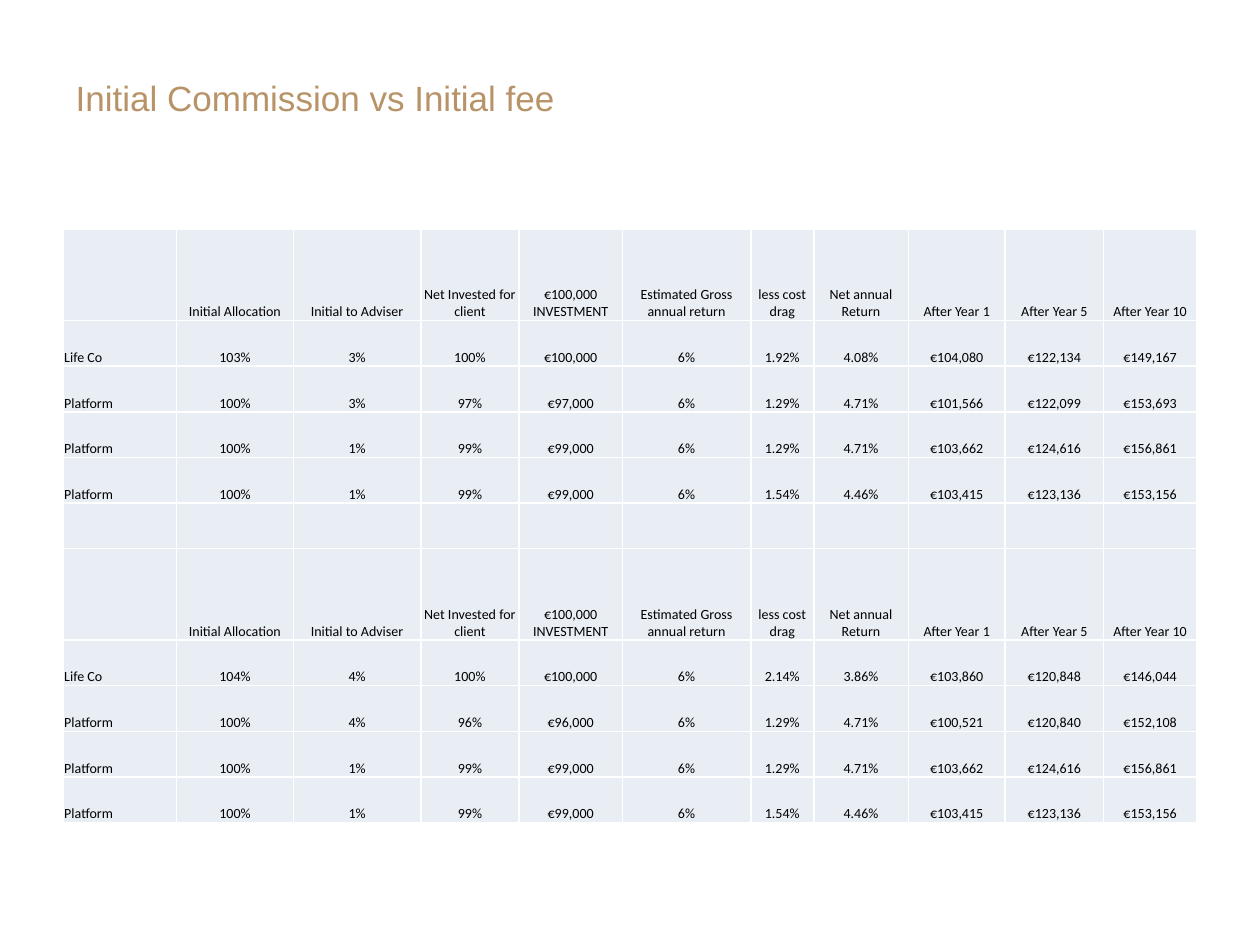
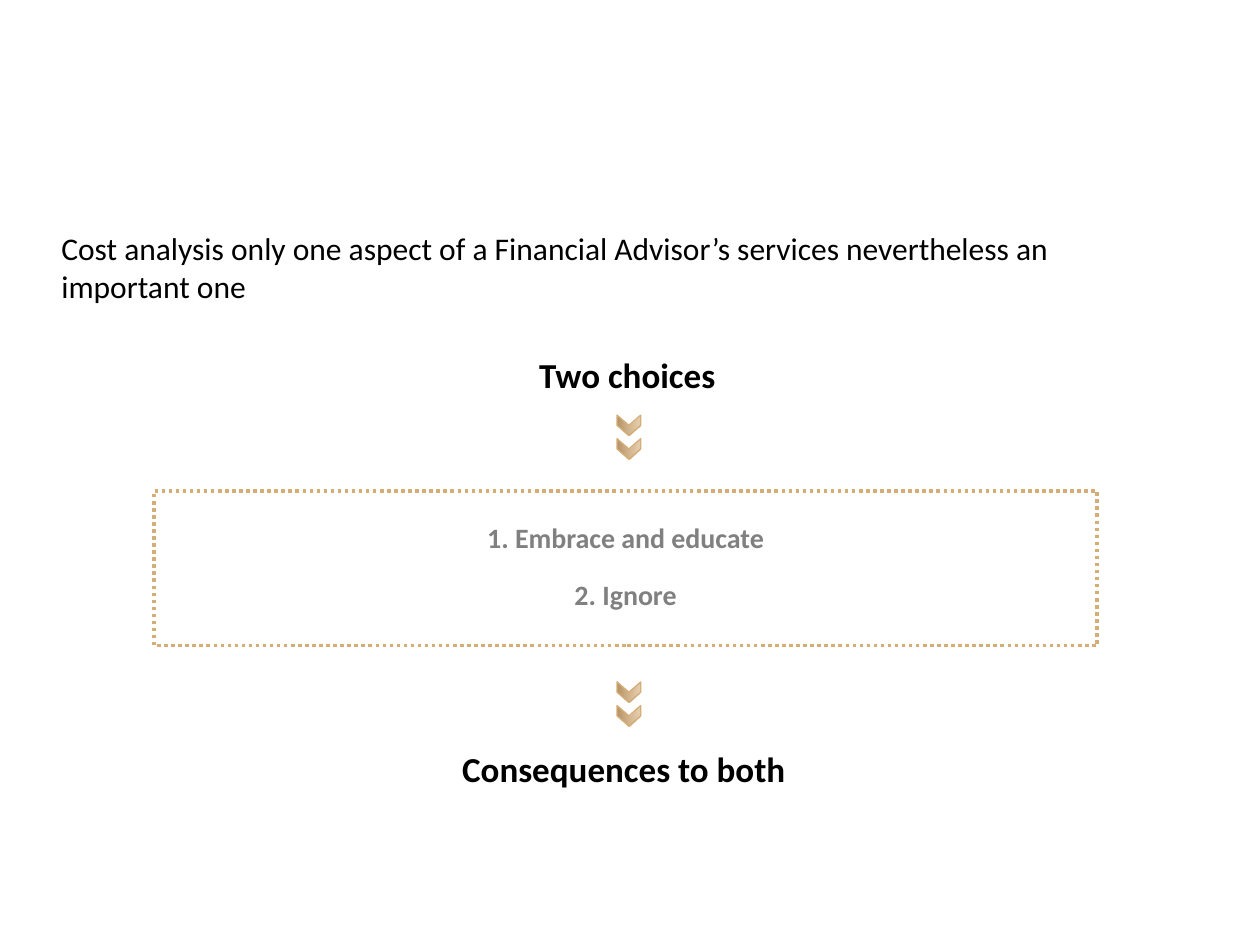
from dataclasses import dataclass

from lxml import etree
from pptx import Presentation
from pptx.dml.color import RGBColor
from pptx.enum.dml import MSO_LINE
from pptx.enum.shapes import MSO_SHAPE
from pptx.enum.text import MSO_ANCHOR, PP_ALIGN
from pptx.oxml.ns import qn
from pptx.slide import Slide
from pptx.table import _Cell
from pptx.text.text import TextFrame
from pptx.util import Pt

DARK_GOLD = RGBColor(0xB8, 0x93, 0x67)
LIGHT_GOLD = RGBColor(0xD4, 0xAD, 0x77)
BLACK = RGBColor(0x00, 0x00, 0x00)
WHITE = RGBColor(0xFF, 0xFF, 0xFF)
GREY = RGBColor(0x80, 0x80, 0x80)
CELL_BLUE = RGBColor(0xE9, 0xED, 0xF4)

LEFT, CENTER = PP_ALIGN.LEFT, PP_ALIGN.CENTER
TOP, MIDDLE, BOTTOM = MSO_ANCHOR.TOP, MSO_ANCHOR.MIDDLE, MSO_ANCHOR.BOTTOM
RECTANGLE, CHEVRON = MSO_SHAPE.RECTANGLE, MSO_SHAPE.CHEVRON
DOTTED = MSO_LINE.ROUND_DOT
TITLE_ONLY, BLANK = 5, 6

TITLE_FONT, BODY_FONT = "Arial", "Calibri"
LIGHT_GOLD_OPACITY = 57
LINE_PITCH = 16.2
ROW_HEIGHT = 26.1
CELL_INSET = 0.72
COLUMN_WIDTHS = (64.8, 67, 72.7, 56.2, 59, 73.4, 36, 54, 55.4, 56.2, 53.3)

HEADINGS = ("", "Initial Allocation", "Initial to Adviser", "Net Invested for client",
            "€100,000 INVESTMENT", "Estimated Gross annual return", "less cost drag",
            "Net annual Return", "After Year 1", "After Year 5", "After Year 10")
PLATFORM_LOW_FEE = (
    ("Platform", "100%", "1%", "99%", "€99,000", "6%", "1.29%", "4.71%",
     "€103,662", "€124,616", "€156,861"),
    ("Platform", "100%", "1%", "99%", "€99,000", "6%", "1.54%", "4.46%",
     "€103,415", "€123,136", "€153,156"),
)
COMPARISON = (
    HEADINGS,
    ("Life Co", "103%", "3%", "100%", "€100,000", "6%", "1.92%", "4.08%",
     "€104,080", "€122,134", "€149,167"),
    ("Platform", "100%", "3%", "97%", "€97,000", "6%", "1.29%", "4.71%",
     "€101,566", "€122,099", "€153,693"),
    *PLATFORM_LOW_FEE,
    ("",) * len(HEADINGS),
    HEADINGS,
    ("Life Co", "104%", "4%", "100%", "€100,000", "6%", "2.14%", "3.86%",
     "€103,860", "€120,848", "€146,044"),
    ("Platform", "100%", "4%", "96%", "€96,000", "6%", "1.29%", "4.71%",
     "€100,521", "€120,840", "€152,108"),
    *PLATFORM_LOW_FEE,
)


@dataclass(frozen=True)
class Statement:
    text: str
    left: float
    top: float
    width: float
    height: float
    size: float
    bold: bool = False
    wrap: bool = False


STATEMENTS = (
    Statement("Cost analysis only one aspect of a Financial Advisor’s services "
              "nevertheless an important one", 28, 127.5, 648, 51, 18, wrap=True),
    Statement("Two choices", 301, 198.7, 116, 31.5, 20, bold=True),
    Statement("Consequences to both", 257, 423.5, 201, 31.5, 20, bold=True),
)
CHEVRON_PAIR_TOPS = (236.3, 388.8)
CHEVRON_LEFT, CHEVRON_WIDTH, CHEVRON_PITCH = 353.5, 11.7, 13.5


def write_text(frame: TextFrame, *lines: str, size: float, color: RGBColor = BLACK,
               font: str = BODY_FONT, bold: bool = False, align: PP_ALIGN = LEFT,
               anchor: MSO_ANCHOR = TOP, wrap: bool = True,
               pitch: float | None = None, gap: float = 0) -> None:
    frame.word_wrap = wrap
    frame.vertical_anchor = anchor
    for index, line in enumerate(lines):
        paragraph = frame.paragraphs[0] if index == 0 else frame.add_paragraph()
        paragraph.alignment = align
        if pitch:
            paragraph.line_spacing = Pt(pitch)
        if index:
            paragraph.space_before = Pt(gap)
        run = paragraph.add_run()
        run.text = line
        run.font.name, run.font.size, run.font.bold = font, Pt(size), bold
        run.font.color.rgb = color


def add_borders(cell: _Cell) -> None:
    properties = cell._tc.get_or_add_tcPr()
    for side in ("a:lnL", "a:lnR", "a:lnT", "a:lnB"):
        line = etree.SubElement(properties, qn(side), w=str(Pt(1)))
        fill = etree.SubElement(line, qn("a:solidFill"))
        etree.SubElement(fill, qn("a:srgbClr"), val=str(WHITE))


def add_comparison_table(slide: Slide) -> None:
    frame = slide.shapes.add_table(len(COMPARISON), len(HEADINGS), Pt(36), Pt(131),
                                   Pt(sum(COLUMN_WIDTHS)),
                                   Pt(ROW_HEIGHT * len(COMPARISON)))
    table = frame.table
    table.first_row = table.horz_banding = False
    for column, width in zip(table.columns, COLUMN_WIDTHS):
        column.width = Pt(width)
    for row, values in zip(table.rows, COMPARISON):
        row.height = Pt(ROW_HEIGHT * (2 if values is HEADINGS else 1))
        for index, (cell, value) in enumerate(zip(row.cells, values)):
            add_borders(cell)
            cell.fill.solid()
            cell.fill.fore_color.rgb = CELL_BLUE
            cell.margin_left = cell.margin_right = cell.margin_top = Pt(CELL_INSET)
            cell.margin_bottom = 0
            cell.vertical_anchor = BOTTOM
            if value:
                write_text(cell.text_frame, value, size=8, anchor=BOTTOM,
                           align=CENTER if index else LEFT)


def add_statement(slide: Slide, statement: Statement) -> None:
    box = slide.shapes.add_textbox(Pt(statement.left), Pt(statement.top),
                                   Pt(statement.width), Pt(statement.height))
    write_text(box.text_frame, statement.text, size=statement.size,
               bold=statement.bold, wrap=statement.wrap)


def add_choices_box(slide: Slide) -> None:
    box = slide.shapes.add_shape(RECTANGLE, Pt(88), Pt(280.6), Pt(539), Pt(88.4))
    box.shadow.inherit = False
    box.fill.background()
    box.line.color.rgb = LIGHT_GOLD
    box.line.width = Pt(2)
    box.line.dash_style = DOTTED
    box.text_frame.margin_top = Pt(3.6 + LINE_PITCH)
    write_text(box.text_frame, "1. Embrace and educate", "2. Ignore", size=16,
               color=GREY, bold=True, align=CENTER, pitch=LINE_PITCH, gap=LINE_PITCH)


def add_chevron_pair(slide: Slide, top: float) -> None:
    """Draw two grouped chevrons pointing down, shaded from left to right."""
    pair = slide.shapes.add_group_shape()
    for index in range(2):
        chevron = pair.shapes.add_shape(
            CHEVRON, Pt(CHEVRON_LEFT), Pt(top + index * CHEVRON_PITCH),
            Pt(CHEVRON_WIDTH), Pt(CHEVRON_PITCH))
        chevron.rotation = 90
        chevron.shadow.inherit = False
        chevron.line.color.rgb = LIGHT_GOLD
        chevron.line.width = Pt(0.75)
        chevron.fill.gradient()
        chevron.fill.gradient_angle = 0
        for stop, color in zip(chevron.fill.gradient_stops, (DARK_GOLD, LIGHT_GOLD)):
            stop.color.rgb = color
        gradient = chevron._element.spPr.find(qn("a:gradFill"))
        gradient.set("rotWithShape", "0")
        last_color = gradient.findall(".//" + qn("a:srgbClr"))[-1]
        etree.SubElement(last_color, qn("a:alpha"), val=str(LIGHT_GOLD_OPACITY * 1000))


def build_fee_slide(deck: Presentation) -> None:
    slide = deck.slides.add_slide(deck.slide_layouts[TITLE_ONLY])
    title = slide.shapes.title
    title.left, title.top, title.width, title.height = Pt(36), Pt(41), Pt(648), Pt(30)
    write_text(title.text_frame, "Initial Commission vs Initial fee", size=20,
               color=DARK_GOLD, font=TITLE_FONT, anchor=MIDDLE)
    add_comparison_table(slide)


def build_choices_slide(deck: Presentation) -> None:
    slide = deck.slides.add_slide(deck.slide_layouts[BLANK])
    add_choices_box(slide)
    for top in CHEVRON_PAIR_TOPS:
        add_chevron_pair(slide, top)
    for statement in STATEMENTS:
        add_statement(slide, statement)


def main() -> None:
    deck = Presentation()
    deck.slide_width, deck.slide_height = Pt(720), Pt(540)
    build_fee_slide(deck)
    build_choices_slide(deck)
    deck.save("out.pptx")


if __name__ == "__main__":
    main()
